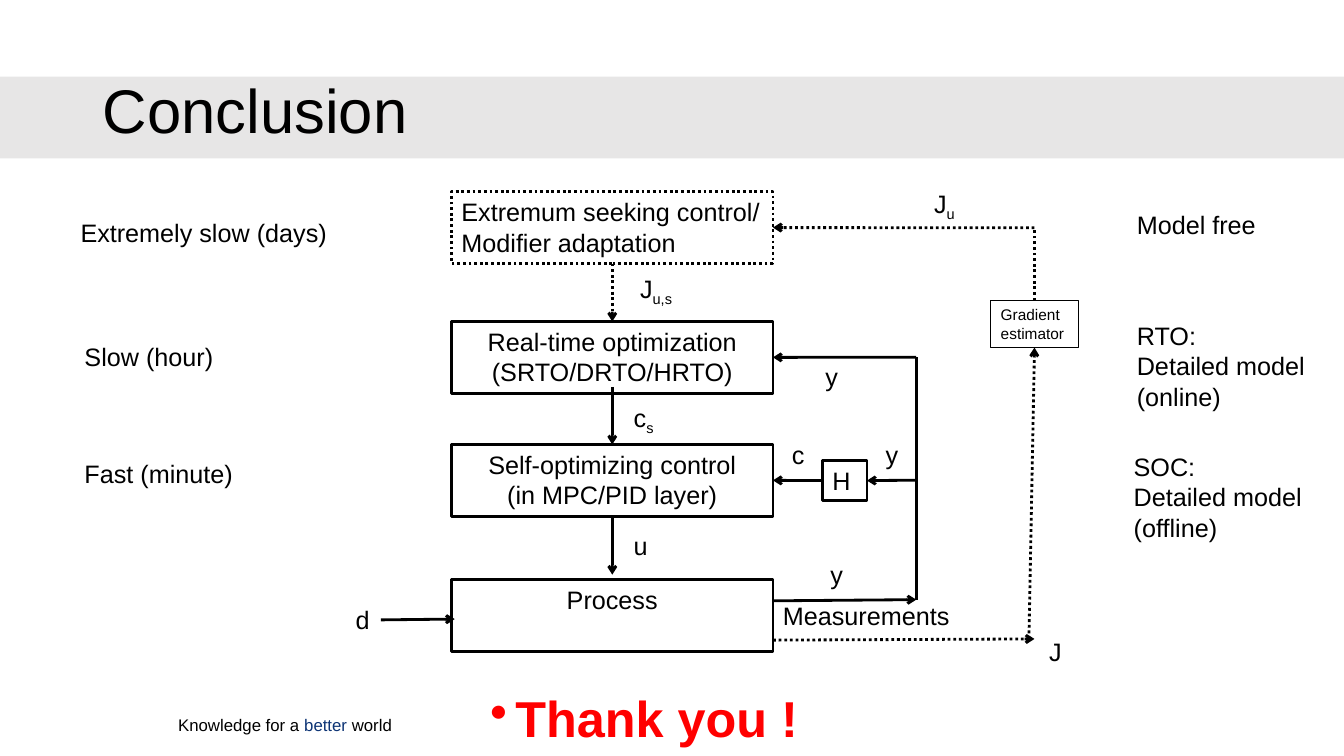
"""Build the conclusion slide with the layered control diagram."""
import pptx
import pptx.util
import pptx.dml.color
import pptx.enum.dml
import pptx.enum.shapes
import pptx.enum.text
import pptx.oxml
import pptx.oxml.ns

Cm, Pt = pptx.util.Cm, pptx.util.Pt
ALIGN = pptx.enum.text.PP_ALIGN
ANCHOR = pptx.enum.text.MSO_ANCHOR
TOP, LEFT, BOTTOM, RIGHT = range(4)
BLACK = "000000"
SUB = {"base": -25000}
COL, WIDE, HIGH = 11.38, 8.1, 1.81
MID, EDGE = COL + WIDE / 2, COL + WIDE
LOOP, OUTER = 23.09, 26.07

layers = [
    ("seek", 4.83, ["Extremum seeking control/", "Modifier adaptation"],
     {"align": ALIGN.LEFT, "wrap": False}, True),
    ("rto", 8.1, ["Real-time optimization", "(SRTO/DRTO/HRTO)"], {}, False),
    ("soc", 11.2, ["Self-optimizing control", "(in MPC/PID layer)"], {}, False),
    ("process", 14.6, ["Process"], {}, False),
]

labels = [
    (["d"], 8.71, 15.11, 0.86),
    (["u"], 15.72, 13.23, 0.86),
    ([[("c", {}), ("s", SUB)]], 15.72, 10.01, 1.04),
    ([[("J", {}), ("u,s", SUB)]], 15.88, 6.76, 1.4),
    ([[("J", {}), ("u", SUB)]], 23.29, 4.62, 1.07),
    (["J"], 26.19, 15.9, 0.84),
    (["y"], 20.68, 13.97, 0.84),
    (["y"], 20.55, 8.99, 0.84),
    (["y"], 22.07, 10.95, 0.84),
    (["c"], 19.71, 10.95, 0.84),
    (["Measurements"], EDGE, 15.01, 4.75),
    (["Extremely slow (days)"], 1.78, 5.36, 6.78),
    (["Slow (hour)"], 1.88, 8.48, 3.78),
    (["Fast (minute)"], 1.88, 11.43, 4.29),
    (["Model free"], 28.4, 5.16, 3.53),
    (["RTO:", "Detailed model", "(online)"], 28.4, 7.95, 4.98),
    (["SOC:", "Detailed model", "(offline)"], 28.32, 11.25, 4.98),
]

# start, end, dotted, arrow; an end is a point or a box name with its side
links = [
    (("seek", BOTTOM), ("rto", TOP), True, True),
    ((MID, 9.75), ("soc", TOP), False, True),
    (("soc", BOTTOM), (MID, 14.48), False, True),
    ((9.6, 15.62), (11.46, 15.6), False, True),
    ((EDGE, 15.14), (LOOP, 15.11), False, True),
    ((LOOP, 15.11), (LOOP, 9), False, False),
    ((LOOP, 9), ("rto", RIGHT), False, True),
    ((LOOP, 12.1), ("H", RIGHT), False, True),
    (("H", LEFT), ("soc", RIGHT), False, True),
    ((EDGE, 16.13), (OUTER, 16.1), True, True),
    ((25.93, 16.1), ("grad", BOTTOM), True, True),
    (("grad", TOP), (OUTER, 5.74), True, False),
    ((OUTER, 5.74), ("seek", RIGHT), True, True),
]

deck = pptx.Presentation()
deck.slide_width, deck.slide_height = Cm(33.87), Cm(19.05)
slide = deck.slides.add_slide(deck.slide_layouts[6])
boxes = {}


def paint(form, shade):
    form.solid()
    form.fore_color.rgb = pptx.dml.color.RGBColor.from_string(shade)


def node(tag, **kind):
    item = pptx.oxml.parse_xml(f"<a:{tag} {pptx.oxml.ns.nsdecls('a')}/>")
    for key, value in kind.items():
        item.set(key, value)
    return item


def write(shape, text, size=18, color=BLACK, bold=False, align=ALIGN.LEFT,
          anchor=ANCHOR.TOP, wrap=False, space=None, bullet=None):
    frame = shape.text_frame
    frame.word_wrap, frame.vertical_anchor = wrap, anchor
    for i, row in enumerate(text):
        para = frame.paragraphs[0] if i == 0 else frame.add_paragraph()
        para.alignment = align
        if space:
            para.line_spacing = space
        if bullet:
            props = para._p.get_or_add_pPr()
            props.set("marL", str(Cm(0.64)))
            props.set("indent", str(-Cm(0.64)))
            props.append(node("buChar", char=bullet))
        for words, change in [(row, {})] if isinstance(row, str) else row:
            run = para.add_run()
            run.text = words
            run.font.name, run.font.bold = "Arial", bold
            run.font.size = Pt(size)
            paint(run.font.fill, change.get("color", color))
            if "base" in change:
                run._r.get_or_add_rPr().set("baseline", str(change["base"]))


def label(text, x, y, w, h, **form):
    write(slide.shapes.add_textbox(Cm(x), Cm(y), Cm(w), Cm(h)), text, **form)


def stroke(line, width=2, dotted=False):
    paint(line.fill, BLACK)
    line.width = Pt(width)
    if dotted:
        line.dash_style = pptx.enum.dml.MSO_LINE.ROUND_DOT


def box(x, y, w, h, fill=None, width=2, dotted=False):
    shape = slide.shapes.add_shape(
        pptx.enum.shapes.MSO_SHAPE.RECTANGLE, Cm(x), Cm(y), Cm(w), Cm(h))
    shape.shadow.inherit = False
    if fill:
        paint(shape.fill, fill)
    else:
        shape.fill.background()
    if width:
        stroke(shape.line, width, dotted)
    else:
        shape.line.fill.background()
    return shape


def link(start, end, dotted, arrow):
    points = [(0, 0) if isinstance(p[0], str) else p for p in (start, end)]
    line = slide.shapes.add_connector(
        pptx.enum.shapes.MSO_CONNECTOR.STRAIGHT,
        *(Cm(v) for point in points for v in point))
    for spot, join in ((start, line.begin_connect), (end, line.end_connect)):
        if isinstance(spot[0], str):
            join(boxes[spot[0]], spot[1])
    stroke(line.line, dotted=dotted)
    if arrow:
        line.line._get_or_add_ln().append(node("tailEnd", type="arrow"))
    line._element.spPr.append(node("effectLst"))


box(0, 1.93, 33.87, 2.06, fill="E7E6E6", width=0)
label(["Conclusion"], 2.34, 1.02, 29.21, 3.68, size=44, space=0.9,
      anchor=ANCHOR.MIDDLE, wrap=True)

for name, y, text, form, dotted in layers:
    boxes[name] = box(COL, y, WIDE, HIGH, dotted=dotted)
    write(boxes[name], text, **{"align": ALIGN.CENTER, "wrap": True, **form})
boxes["H"] = box(20.73, 11.6, 1.12, 1.02)
write(boxes["H"], ["H"], wrap=True)
boxes["grad"] = box(24.97, 7.57, 2.2, 1.19, fill="FFFFFF", width=0.75)
write(boxes["grad"], ["Gradient estimator"], size=11, wrap=True)

for ends in links:
    link(*ends)
for text, x, y, w in labels:
    label(text, x, y, w, 0.25 + 0.77 * len(text))

label([[("Knowledge for a ", {}), ("better ", {"color": "0D3475"}),
        ("world", {})]], 4.24, 17.88, 6.25, 0.76, size=12, wrap=True)
label(["Thank you !"], 5.44, 17.37, 21.59, 1.68, size=36, color="FF0000",
      bold=True, align=ALIGN.CENTER, wrap=True, space=0.9, bullet="•")

deck.save("out.pptx")
